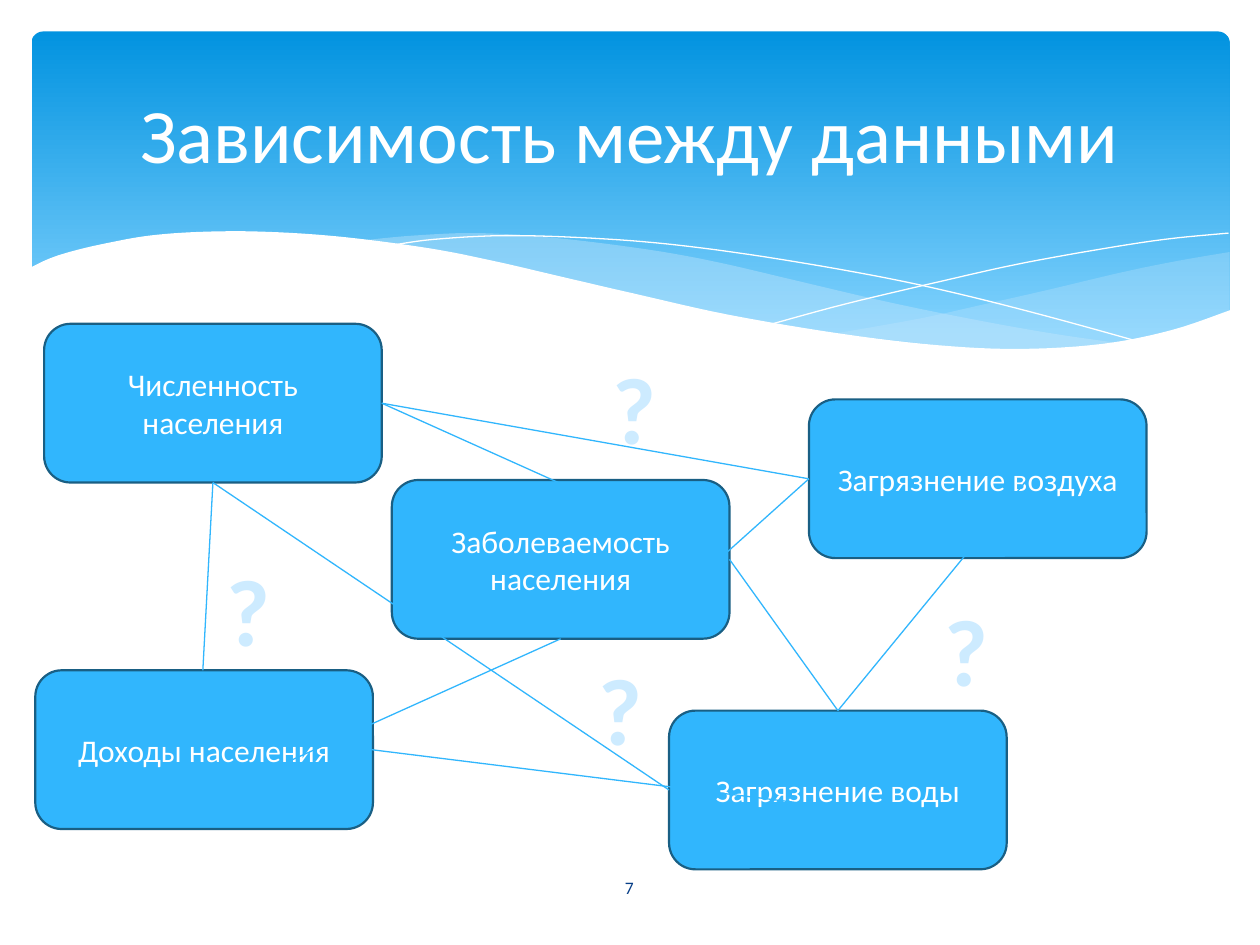
from dataclasses import dataclass

from lxml.etree import SubElement
from pptx import Presentation
from pptx.dml.color import RGBColor
from pptx.enum.shapes import MSO_CONNECTOR, MSO_SHAPE
from pptx.enum.text import MSO_ANCHOR, MSO_AUTO_SIZE, PP_ALIGN
from pptx.oxml.ns import qn
from pptx.slide import Slide
from pptx.util import Emu, Pt

EMU_PER_PX = 9144
WHITE = RGBColor(0xFF, 0xFF, 0xFF)
SKY_TOP = RGBColor(0x02, 0x93, 0xE0)
SKY_BOTTOM = RGBColor(0x83, 0xD3, 0xFE)
MIST = RGBColor(0xC6, 0xE7, 0xFC)
BLUE = RGBColor(0x31, 0xB6, 0xFD)
BORDER = RGBColor(0x19, 0x5F, 0x84)
PALE = RGBColor(0xCD, 0xEB, 0xFF)
NAVY = RGBColor(0x07, 0x3E, 0x87)

RIGHT_SWELL = [
    [(976, 200), (935, 207), (891, 216), (832, 230), (779, 242), (729, 253), (661, 265)],
    [(661, 265), (719, 271), (769, 277), (814, 278), (863, 275), (913, 267), (949, 257), (976, 247)],
]
MIDDLE_SWELL = [
    [(893, 273), (837, 265), (775, 254), (706, 240), (629, 222), (569, 208), (514, 198),
     (442, 189), (380, 185), (328, 187), (286, 191)],
    [(286, 191), (342, 199), (404, 211), (449, 222), (530, 240), (601, 255), (665, 266),
     (722, 274), (773, 277), (818, 278), (857, 277), (893, 273)],
]
FALLING_LINE = [(309, 195), (344, 190), (401, 187), (469, 189), (533, 194), (608, 204),
                (695, 219), (760, 233), (831, 251), (907, 272)]
RISING_LINE = [(613, 257), (672, 241), (748, 223), (806, 210), (866, 199), (924, 190), (975, 185)]
FOREGROUND = [
    [(977, 246), (930, 262), (875, 273), (809, 277), (744, 274), (668, 265), (579, 250),
     (503, 233), (447, 220), (391, 207), (340, 197), (271, 188), (211, 184), (161, 184),
     (119, 187), (85, 193), (59, 199), (40, 205), (23, 213)],
    [(23, 213), (23, 329)],
    [(23, 329), (977, 329)],
]

BOX_SIZE = (268, 126)
BOXES = {
    "Численность населения": (35, 257),
    "Загрязнение воздуха": (642, 317),
    "Доходы населения": (28, 532),
    "Загрязнение воды": (531, 564),
    "Заболеваемость населения": (311, 381),
}
LINKS = [
    ((169, 383), (161, 532)),
    ((303, 320), (461, 391)),
    ((295, 595), (681, 643)),
    ((232, 603), (445, 507)),
    ((665, 564), (579, 444)),
    ((665, 564), (815, 381)),
    ((642, 380), (555, 458)),
    ((303, 320), (642, 380)),
    ((169, 383), (531, 627)),
]
QUESTION_MARKS = [(476, 273), (170, 433), (740, 465), (465, 512)]


def px(*lengths):
    return [Emu(round(length * EMU_PER_PX)) for length in lengths]


def smooth(knots, steps=6):
    padded = [knots[0], *knots, knots[-1]]
    points = [knots[0]]
    for a, b, c, d in zip(padded, padded[1:], padded[2:], padded[3:]):
        for t in (step / steps for step in range(1, steps + 1)):
            points.append(tuple(
                q + t * (r - p + t * (2 * p - 5 * q + 4 * r - s + t * (3 * q - p - 3 * r + s))) / 2
                for p, q, r, s in zip(a, b, c, d)))
    return points


@dataclass
class SlideBuilder:
    """Draws styled elements on one slide."""

    slide: Slide
    font_name: str = "Calibri"

    def set_text(self, shape, text, size, color, bold=False, anchor=MSO_ANCHOR.MIDDLE):
        frame = shape.text_frame
        frame.text = text
        frame.word_wrap = True
        frame.vertical_anchor = anchor
        paragraph = frame.paragraphs[0]
        paragraph.alignment = PP_ALIGN.CENTER
        font = paragraph.font
        font.name, font.size, font.bold = self.font_name, Pt(size), bold
        font.color.rgb = color
        return frame

    def rounded(self, x, y, width, height):
        shape = self.slide.shapes.add_shape(MSO_SHAPE.ROUNDED_RECTANGLE, *px(x, y, width, height))
        shape.shadow.inherit = False
        return shape

    def banner(self, x, y, width, height):
        shape = self.rounded(x, y, width, height)
        shape.adjustments[0] = 0.034
        shape.line.fill.background()
        shape.fill.gradient()
        shape.fill.gradient_angle = 270
        for stop, color, position in zip(shape.fill.gradient_stops, (SKY_TOP, SKY_BOTTOM), (0, 0.9)):
            stop.color.rgb = color
            stop.position = position

    def outline(self, points, close):
        start, *rest = [px(*point) for point in points]
        builder = self.slide.shapes.build_freeform(*start)
        builder.add_line_segments(rest, close=close)
        shape = builder.convert_to_shape()
        shape.shadow.inherit = False
        return shape

    def wave(self, curves, color, opacity=100):
        shape = self.outline([point for curve in curves for point in smooth(curve)], True)
        shape.line.fill.background()
        shape.fill.solid()
        shape.fill.fore_color.rgb = color
        if opacity < 100:
            color_element = shape._element.spPr.find(".//" + qn("a:srgbClr"))
            SubElement(color_element, qn("a:alpha"), val=str(opacity * 1000))

    def curve(self, knots):
        shape = self.outline(smooth(knots), False)
        shape.fill.background()
        shape.line.color.rgb = WHITE
        shape.line.width = Pt(0)

    def box(self, text, x, y):
        shape = self.rounded(x, y, *BOX_SIZE)
        shape.fill.solid()
        shape.fill.fore_color.rgb = BLUE
        shape.line.color.rgb = BORDER
        shape.line.width = Pt(1.25)
        self.set_text(shape, text, 18, WHITE)

    def link(self, start, end):
        connector = self.slide.shapes.add_connector(MSO_CONNECTOR.STRAIGHT, *px(*start, *end))
        connector.line.color.rgb = BLUE
        connector.line.width = Pt(0.75)
        SubElement(connector._element.spPr, qn("a:effectLst"))

    def label(self, text, x, y, width, height, size, color):
        shape = self.slide.shapes.add_textbox(*px(x, y, width, height))
        self.set_text(shape, text, size, color)

    def question_mark(self, x, y):
        shape = self.slide.shapes.add_textbox(*px(x, y, 47, 79))
        frame = self.set_text(shape, "?", 54, PALE, bold=True, anchor=MSO_ANCHOR.TOP)
        frame.word_wrap = False
        frame.auto_size = MSO_AUTO_SIZE.SHAPE_TO_FIT_TEXT


def main():
    presentation = Presentation()
    presentation.slide_width, presentation.slide_height = px(1000, 750)
    builder = SlideBuilder(presentation.slides.add_slide(presentation.slide_layouts[6]))

    builder.banner(25, 25, 951, 270)
    builder.wave(RIGHT_SWELL, MIST, 29)
    builder.wave(MIDDLE_SWELL, MIST, 40)
    builder.curve(FALLING_LINE)
    builder.curve(RISING_LINE)
    builder.wave(FOREGROUND, WHITE)
    builder.label("Зависимость между данными", 50, 37, 900, 137, 44, WHITE)

    for text, position in BOXES.items():
        builder.box(text, *position)
    for start, end in LINKS:
        builder.link(start, end)
    for position in QUESTION_MARKS:
        builder.question_mark(*position)
    builder.label("7", 436, 684, 127, 40, 10, NAVY)

    presentation.save("out.pptx")


if __name__ == "__main__":
    main()
